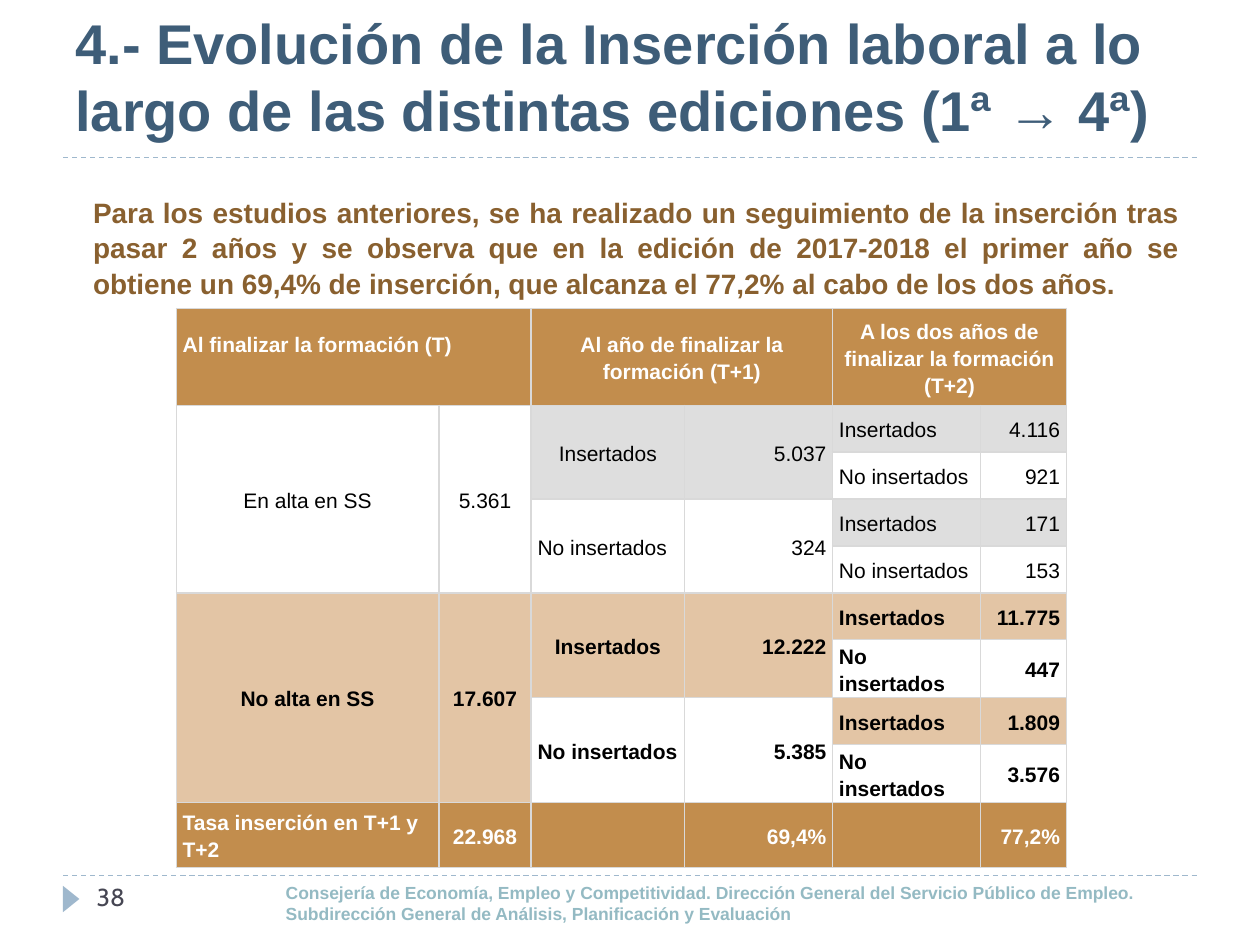
from dataclasses import dataclass

from lxml.etree import SubElement
from pptx import Presentation
from pptx.dml.color import RGBColor as Rgb
from pptx.enum.dml import MSO_LINE_DASH_STYLE as Dash
from pptx.enum.shapes import MSO_CONNECTOR as Connector, MSO_SHAPE as Shape
from pptx.enum.text import MSO_ANCHOR as Anchor, PP_ALIGN as Align
from pptx.oxml.ns import qn
from pptx.util import Pt


@dataclass(frozen=True)
class Theme:
    font: str = "Arial"
    number_font: str = "Cabin"
    title: str = "3E5D78"
    body: str = "89602F"
    footer: str = "94BAC3"
    number: str = "464653"
    accent: str = "9FB8CD"
    header: str = "C28D4D"
    tint: str = "E3C5A5"
    grey: str = "DEDEDE"
    border: str = "D9D9D9"
    white: str = "FFFFFF"
    black: str = "000000"
    title_size: int = 32
    body_size: int = 16
    number_size: int = 14
    table_size: int = 12
    footer_size: int = 10


def set_all(target, values):
    for name, value in values.items():
        setattr(target, name, value)


class SlideBuilder:
    def __init__(self, slide, theme):
        self.shapes = slide.shapes
        self.theme = theme

    def fill_text(self, frame, lines, size, color, bold=True, font=None, **layout):
        for index, line in enumerate(lines):
            paragraph = frame.add_paragraph() if index else frame.paragraphs[0]
            paragraph.text = line
            set_all(paragraph, layout)
            set_all(paragraph.font, {"name": font or self.theme.font,
                                     "size": Pt(size), "bold": bold})
            paragraph.font.color.rgb = Rgb.from_string(color)
        return paragraph

    def text(self, box, lines, size, color, anchor=Anchor.TOP, **style):
        frame = self.shapes.add_textbox(*map(Pt, box)).text_frame
        set_all(frame, {"word_wrap": True, "vertical_anchor": anchor})
        return self.fill_text(frame, lines, size, color, **style)

    def rule(self, left, right, y):
        line = self.shapes.add_connector(
            Connector.STRAIGHT, Pt(left), Pt(y), Pt(right), Pt(y))
        set_all(line.line, {"width": Pt(0.75), "dash_style": Dash.DASH})
        line.line.color.rgb = Rgb.from_string(self.theme.accent)
        SubElement(line._element.spPr, qn("a:effectLst"))

    def marker(self, box):
        triangle = self.shapes.add_shape(Shape.ISOSCELES_TRIANGLE, *map(Pt, box))
        triangle.rotation = 90
        triangle.shadow.inherit = False
        triangle.fill.solid()
        triangle.fill.fore_color.rgb = Rgb.from_string(self.theme.accent)
        triangle.line.fill.background()

    def table(self, left, top, widths, heights):
        table = self.shapes.add_table(
            len(heights), len(widths), Pt(left), Pt(top),
            Pt(sum(widths)), Pt(sum(heights))).table
        for column, width in zip(table.columns, widths):
            column.width = Pt(width)
        for row, height in zip(table.rows, heights):
            row.height = Pt(height)
        for cell in table.iter_cells():
            self.borders(cell)
        return table

    def borders(self, cell):
        properties = cell._tc.get_or_add_tcPr()
        for side in ("lnL", "lnR", "lnT", "lnB"):
            line = SubElement(properties, qn(f"a:{side}"), w=str(Pt(1)))
            fill = SubElement(line, qn("a:solidFill"))
            SubElement(fill, qn("a:srgbClr"), val=self.theme.border)

    def cell(self, table, row, column, text, fill, color, align=Align.LEFT,
             bold=True, span=(1, 1), bottom=0):
        cell = table.cell(row, column)
        if span != (1, 1):
            cell.merge(table.cell(row + span[0] - 1, column + span[1] - 1))
        set_all(cell, {"margin_left": Pt(3.6), "margin_right": Pt(3.6),
                       "margin_top": 0, "margin_bottom": Pt(bottom),
                       "vertical_anchor": Anchor.MIDDLE})
        cell.fill.solid()
        cell.fill.fore_color.rgb = Rgb.from_string(fill)
        self.fill_text(cell.text_frame, [text], self.theme.table_size, color,
                       bold=bold, alignment=align, line_spacing=1.15)


def fill_insertion_table(builder, table):
    theme = builder.theme

    # Header: one title over each pair of columns
    headings = (
        ("Al finalizar la formación (T)", Align.LEFT, 16),
        ("Al año de finalizar la formación (T+1)", Align.CENTER, 0),
        ("A los dos años de finalizar la formación (T+2)", Align.CENTER, 0))
    for index, (heading, align, bottom) in enumerate(headings):
        builder.cell(table, 0, 2 * index, heading, theme.header, theme.white,
                     align, span=(1, 2), bottom=bottom)

    # Groups: status at T, split at T+1 and again at T+2
    groups = (
        ("En alta en SS", "5.361", theme.white, theme.grey, False,
         (("5.037", ("4.116", "921")), ("324", ("171", "153")))),
        ("No alta en SS", "17.607", theme.tint, theme.tint, True,
         (("12.222", ("11.775", "447")), ("5.385", ("1.809", "3.576")))))
    outcomes = ("Insertados", "No insertados")
    for group, (status, total, base, shade, bold, first_year) in enumerate(groups):
        top = 1 + 4 * group
        fills = (shade, theme.white)

        def put(row, column, text, fill, align, rows=1):
            builder.cell(table, row, column, text, fill, theme.black, align,
                         bold, (rows, 1))

        put(top, 0, status, base, Align.CENTER, 4)
        put(top, 1, total, base, Align.CENTER, 4)
        for half, (count, second_year) in enumerate(first_year):
            row = top + 2 * half
            label_align = (Align.CENTER, Align.LEFT)[half]
            put(row, 2, outcomes[half], fills[half], label_align, 2)
            put(row, 3, count, fills[half], Align.RIGHT, 2)
            for step, result in enumerate(second_year):
                put(row + step, 4, outcomes[step], fills[step], Align.LEFT)
                put(row + step, 5, result, fills[step], Align.RIGHT)

    # Closing row with the insertion rates
    rates = ("Tasa inserción en T+1 y T+2", "22.968", "", "69,4%", "", "77,2%")
    aligns = (Align.LEFT, Align.CENTER) + (Align.LEFT, Align.RIGHT) * 2
    for column, (rate, align) in enumerate(zip(rates, aligns)):
        builder.cell(table, 9, column, rate, theme.header, theme.white, align)


def main():
    deck = Presentation()
    set_all(deck, {"slide_width": Pt(720), "slide_height": Pt(540)})
    theme = Theme()
    builder = SlideBuilder(deck.slides.add_slide(deck.slide_layouts[6]), theme)

    # Frame and footer
    for y in (500.4, 90):
        builder.rule(36, 684, y)
    builder.marker((33.1, 509, 15.1, 9.4))
    builder.text(
        (156.2, 500.4, 519.1, 31.7),
        ["Consejería de Economía, Empleo y Competitividad. "
         "Dirección General del Servicio Público de Empleo.",
         "Subdirección General de Análisis, Planificación y Evaluación"],
        theme.footer_size, theme.footer)
    builder.text((48.2, 500.4, 156.2, 28.8), ["38"], theme.number_size,
                 theme.number, bold=False, font=theme.number_font)

    # Title
    builder.text(
        (36, 0, 648, 85),
        ["4.- Evolución de la Inserción laboral a lo largo de las distintas "
         "ediciones (1ª → 4ª)"],
        theme.title_size, theme.title, anchor=Anchor.BOTTOM)

    # Summary
    summary = builder.text(
        (31.7, 107.3, 649.4, 97.2),
        ["Para los estudios anteriores, se ha realizado un seguimiento de la "
         "inserción tras pasar 2 años y se observa que en la edición de "
         "2017-2018 el primer año se obtiene un 69,4% de inserción, que "
         "alcanza el 77,2% al cabo de los dos años."],
        theme.body_size, theme.body, alignment=Align.JUSTIFY,
        line_spacing=1.05, space_after=Pt(6))
    summary._p.get_or_add_pPr().set("marL", str(Pt(14.4)))

    # Insertion table
    widths = (150, 52.8, 87.7, 84.6, 84.6, 48.9)
    heights = (55.2,) + (26.8,) * 5 + (33, 26.8, 33, 37)
    fill_insertion_table(builder, builder.table(100.8, 176.4, widths, heights))

    deck.save("out.pptx")


if __name__ == "__main__":
    main()
